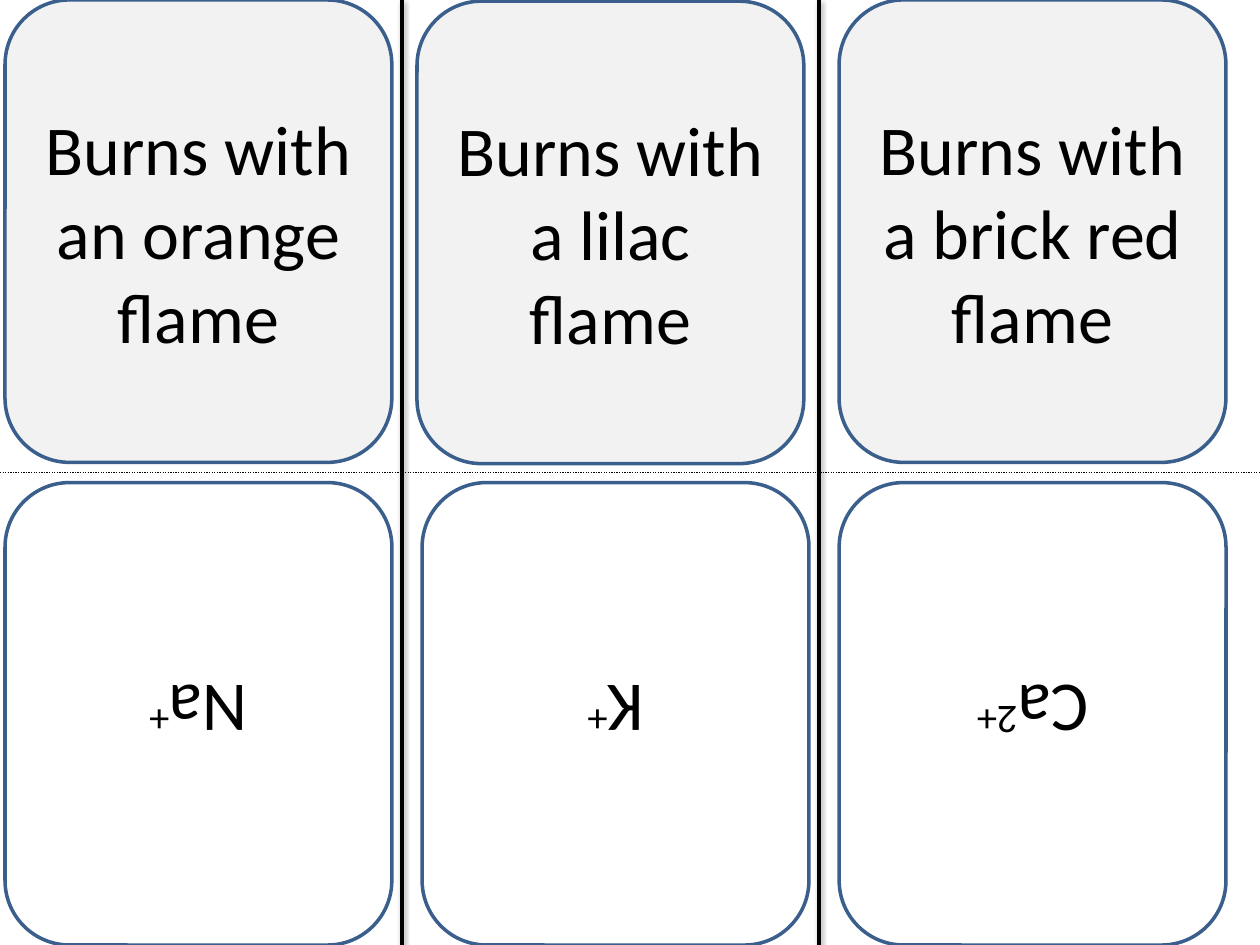
import pptx
import pptx.util
import pptx.dml.color
import pptx.enum.dml
import pptx.enum.shapes
import pptx.enum.text
import pptx.oxml
import pptx.oxml.ns
from lxml import etree

Inches = pptx.util.Inches
Pt = pptx.util.Pt
RGBColor = pptx.dml.color.RGBColor

BLACK = RGBColor(0x00, 0x00, 0x00)
WHITE = RGBColor(0xFF, 0xFF, 0xFF)
PALE_GREY = RGBColor(0xF2, 0xF2, 0xF2)
CARD_BORDER = RGBColor(0x3A, 0x5F, 0x8C)

SLIDE_WIDTH, SLIDE_HEIGHT = 10, 7.5
CARD_WIDTH, CARD_HEIGHT = 3.07, 3.67
LEFT_MARGIN = 0.04
COLUMN_PITCH = 3.31
ROW_PITCH = SLIDE_HEIGHT - CARD_HEIGHT
CUT_OFFSET = 0.16

CARDS = [
    ("Burns with an orange flame", "Na", "+", (0, 0)),
    ("Burns with a lilac flame", "K", "+", (-0.04, 0.01)),
    ("Burns with a brick red flame", "Ca", "2+", (0, 0)),
]

SHADOW_XML = (
    '<a:effectLst %s><a:outerShdw blurRad="%d" dist="%d" dir="5400000" rotWithShape="0">'
    '<a:srgbClr val="000000"><a:alpha val="38000"/></a:srgbClr>'
    "</a:outerShdw></a:effectLst>"
)


def add_card(slide, column, row, fill, text, superscript="", nudge=(0, 0)):
    left = LEFT_MARGIN + column * COLUMN_PITCH + nudge[0]
    top = row * ROW_PITCH + nudge[1]
    card = slide.shapes.add_shape(
        pptx.enum.shapes.MSO_SHAPE.ROUNDED_RECTANGLE,
        Inches(left), Inches(top), Inches(CARD_WIDTH), Inches(CARD_HEIGHT))
    card.shadow.inherit = False
    card.rotation = 180 * row
    card.fill.solid()
    card.fill.fore_color.rgb = fill
    card.line.color.rgb = CARD_BORDER
    card.line.width = Pt(2)

    frame = card.text_frame
    frame.word_wrap = True
    frame.vertical_anchor = pptx.enum.text.MSO_ANCHOR.MIDDLE
    paragraph = frame.paragraphs[0]
    paragraph.alignment = pptx.enum.text.PP_ALIGN.CENTER
    paragraph.font.size = Pt(40)
    paragraph.font.name = "Calibri"
    paragraph.font.color.rgb = BLACK
    paragraph.add_run().text = text
    if superscript:
        run = paragraph.add_run()
        run.text = superscript
        run._r.get_or_add_rPr().set("baseline", "30000")


def add_line(slide, start, end, width, dash=None, shadow=False):
    line = slide.shapes.add_connector(
        pptx.enum.shapes.MSO_CONNECTOR.STRAIGHT,
        *[Inches(length) for length in start + end])
    line.line.color.rgb = BLACK
    line.line.width = Pt(width)
    if dash:
        line.line.dash_style = dash
    properties = line._element.spPr
    if shadow:
        namespace = pptx.oxml.ns.nsdecls("a")
        properties.append(pptx.oxml.parse_xml(
            SHADOW_XML % (namespace, Pt(3.1), Pt(1.6))))
    else:
        etree.SubElement(properties, pptx.oxml.ns.qn("a:effectLst"))


def main():
    presentation = pptx.Presentation()
    presentation.slide_width = Inches(SLIDE_WIDTH)
    presentation.slide_height = Inches(SLIDE_HEIGHT)
    slide = presentation.slides.add_slide(presentation.slide_layouts[6])

    for column, (clue, ion, charge, nudge) in enumerate(CARDS):
        add_card(slide, column, 0, PALE_GREY, clue, nudge=nudge)
    for column, (clue, ion, charge, nudge) in enumerate(CARDS):
        add_card(slide, column, 1, WHITE, ion, charge)

    middle = SLIDE_HEIGHT / 2
    add_line(slide, (0, middle), (SLIDE_WIDTH, middle), 0.75,
             dash=pptx.enum.dml.MSO_LINE.ROUND_DOT)
    for column in range(1, len(CARDS)):
        cut = LEFT_MARGIN + column * COLUMN_PITCH - CUT_OFFSET
        add_line(slide, (cut, 0), (cut, SLIDE_HEIGHT), 2, shadow=True)

    presentation.save("out.pptx")


if __name__ == "__main__":
    main()
